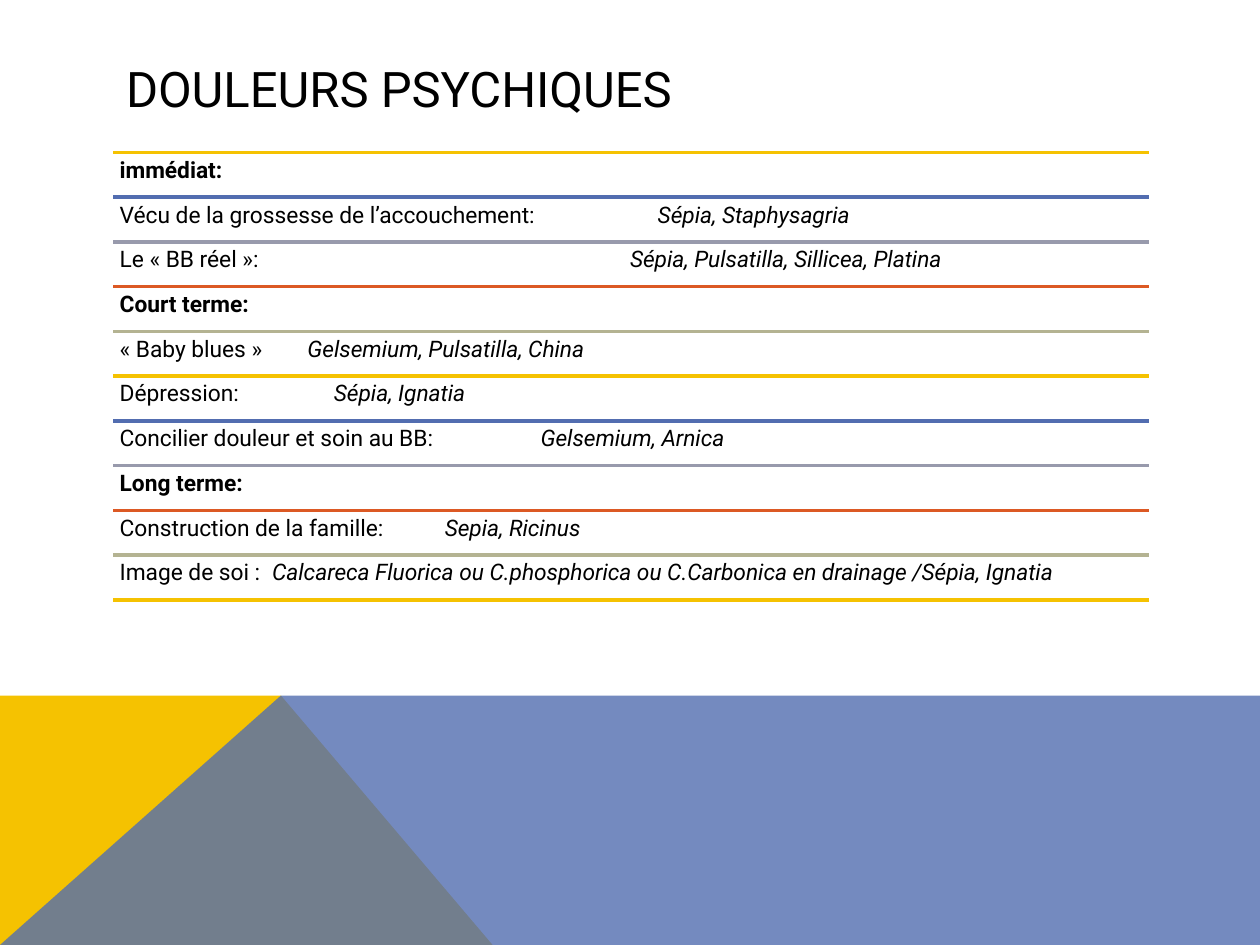
"""Build the slide on psychological pain and its remedies."""
from itertools import cycle
from typing import NamedTuple

from lxml import etree
from pptx import Presentation
from pptx.dml.color import RGBColor
from pptx.enum.shapes import MSO_CONNECTOR
from pptx.enum.text import MSO_ANCHOR, PP_ALIGN
from pptx.oxml.ns import qn
from pptx.util import Inches, Pt

STRAIGHT = MSO_CONNECTOR.STRAIGHT
MIDDLE, TOP = MSO_ANCHOR.MIDDLE, MSO_ANCHOR.TOP
LEFT = PP_ALIGN.LEFT

FONT = "Roboto"
BLACK, YELLOW, BLUE = "000000", "F5C201", "526DB0"
RULE_COLORS = (YELLOW, BLUE, "989AAC", "DC5924", "B4B392")
LIST_X, LIST_Y, LIST_W = 0.9, 1.21, 8.22
ROW_H = 0.355
BAND_Y, PEAK_X = 5.52, 2.23


class Row(NamedTuple):
    label: str
    remedy: str = ""
    tab: float = 0


class Band(NamedTuple):
    points: tuple
    color: str
    alpha: int = 100


ROWS = (
    Row("immédiat:"),
    Row("Vécu de la grossesse de l’accouchement:", "Sépia, Staphysagria", 4.27),
    Row("Le « BB réel »:", "Sépia, Pulsatilla, Sillicea, Platina", 4.05),
    Row("Court terme:"),
    Row("« Baby blues »", "Gelsemium, Pulsatilla, China", 1.49),
    Row("Dépression:", "Sépia, Ignatia", 1.7),
    Row("Concilier douleur et soin au BB:", "Gelsemium, Arnica", 3.34),
    Row("Long terme:"),
    Row("Construction de la famille:", "Sepia, Ricinus", 2.58),
    Row("Image de soi :",
        "Calcareca Fluorica ou C.phosphorica ou C.Carbonica en drainage /Sépia, Ignatia", 1.21),
)
BANDS = (
    Band(((0, 7.5), (0, BAND_Y), (PEAK_X, BAND_Y), (3.91, 7.5)), YELLOW),
    Band(((0, 7.5), (PEAK_X, BAND_Y), (10, BAND_Y), (10, 7.5)), BLUE, 80),
)


def rgb(color: str) -> RGBColor:
    return RGBColor.from_string(color)


def format_frame(tf, anchor, inset: float) -> None:
    values = dict.fromkeys(("margin_left", "margin_top", "margin_right", "margin_bottom"),
                           Inches(inset))
    values.update(word_wrap=True, vertical_anchor=anchor)
    for name, value in values.items():
        setattr(tf, name, value)


def add_run(p, text: str, size: float, **styles) -> None:
    r = p.add_run()
    r.text = text
    for name, value in {"name": FONT, "size": Pt(size), **styles}.items():
        setattr(r.font, name, value)
    r.font.color.rgb = rgb(BLACK)


def add_band(s, band: Band) -> None:
    points = [(Inches(x), Inches(y)) for x, y in band.points]
    builder = s.shapes.build_freeform(*points[0])
    builder.add_line_segments(points[1:], close=True)
    sp = builder.convert_to_shape()
    sp.shadow.inherit = False
    sp.line.fill.background()
    sp.fill.solid()
    sp.fill.fore_color.rgb = rgb(band.color)
    if band.alpha < 100:
        clr = next(sp.element.spPr.iter(qn("a:srgbClr")))
        etree.SubElement(clr, qn("a:alpha"), val=str(band.alpha * 1000))


def add_rule(s, y: float, color: str) -> None:
    sp = s.shapes.add_connector(STRAIGHT, Inches(LIST_X), Inches(y),
                                Inches(LIST_X + LIST_W), Inches(y))
    sp.line.color.rgb = rgb(color)
    sp.line.width = Pt(2)
    etree.SubElement(sp.element.spPr, qn("a:effectLst"))


def add_row(s, y: float, row: Row) -> None:
    sp = s.shapes.add_textbox(Inches(LIST_X), Inches(y), Inches(LIST_W), Inches(ROW_H))
    tf = sp.text_frame
    format_frame(tf, TOP, 0.05)
    p = tf.paragraphs[0]
    p.line_spacing = 0.9
    if not row.remedy:
        add_run(p, row.label, 13, bold=True)
        return
    tabs = etree.SubElement(p._p.get_or_add_pPr(), qn("a:tabLst"))
    etree.SubElement(tabs, qn("a:tab"), pos=str(Inches(row.tab)), algn="l")
    add_run(p, row.label + "\t", 13)
    add_run(p, row.remedy, 13, italic=True)


def add_title(s, text: str) -> None:
    sp = s.shapes.title
    box = {"left": LIST_X, "top": 0.4, "width": LIST_W, "height": 0.6}
    for name, value in box.items():
        setattr(sp, name, Inches(value))
    format_frame(sp.text_frame, MIDDLE, 0.1)
    p = sp.text_frame.paragraphs[0]
    p.alignment = LEFT
    add_run(p, text, 28)


def main() -> None:
    prs = Presentation()
    prs.slide_width, prs.slide_height = Inches(10), Inches(7.5)
    s = prs.slides.add_slide(prs.slide_layouts[5])
    for band in BANDS:
        add_band(s, band)
    add_title(s, "DOULEURS PSYCHIQUES")
    colors = cycle(RULE_COLORS)
    for i, row in enumerate(ROWS):
        y = LIST_Y + i * ROW_H
        add_rule(s, y, next(colors))
        add_row(s, y, row)
    add_rule(s, LIST_Y + len(ROWS) * ROW_H, next(colors))
    prs.save("out.pptx")


if __name__ == "__main__":
    main()
